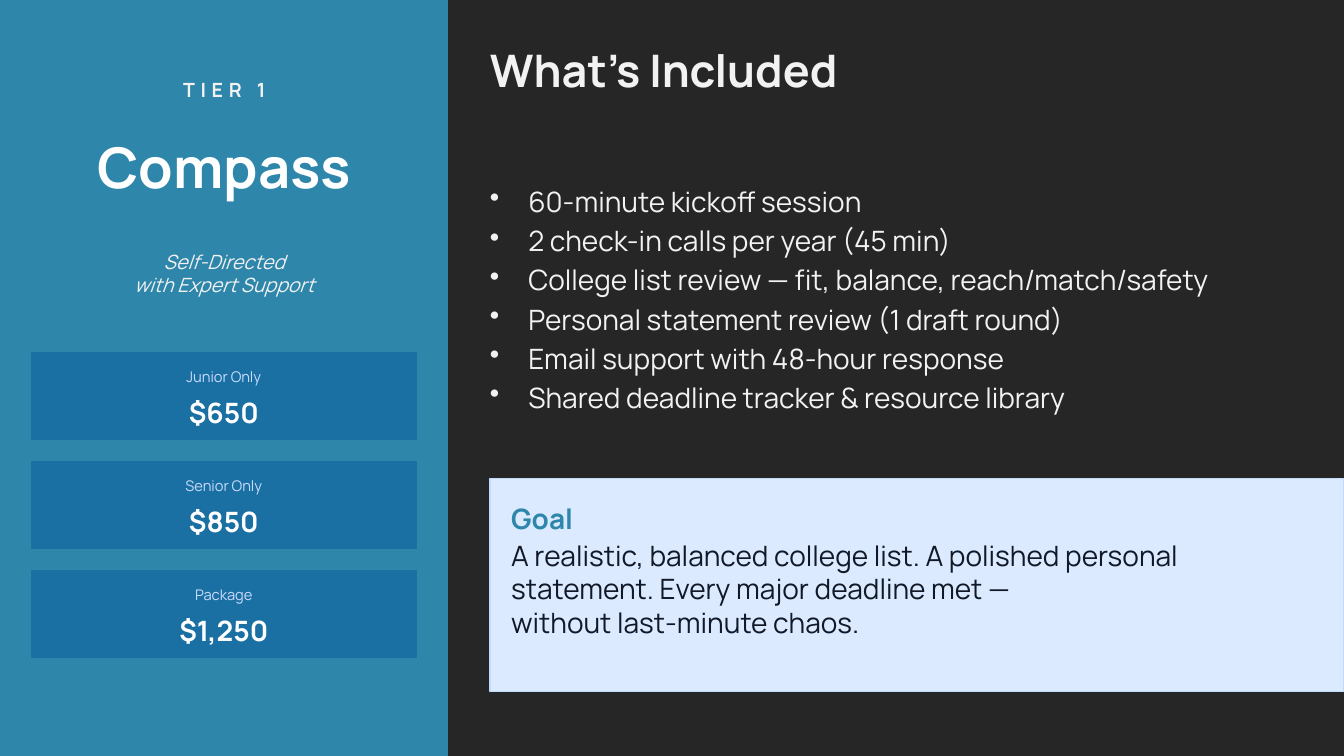
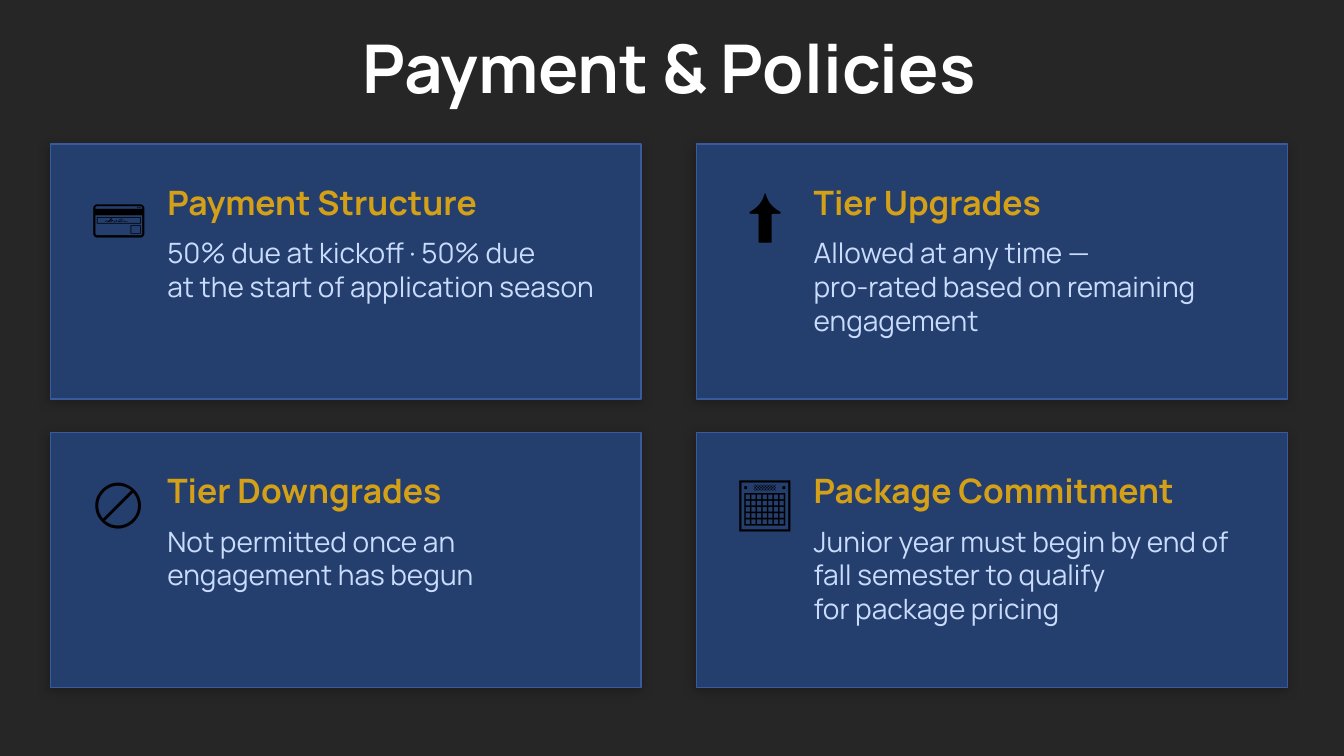
from lxml.etree import SubElement
from pptx import Presentation
from pptx.dml.color import RGBColor
from pptx.enum.shapes import MSO_SHAPE
from pptx.enum.text import MSO_ANCHOR, MSO_AUTO_SIZE, PP_ALIGN
from pptx.oxml import parse_xml
from pptx.oxml.ns import nsdecls, qn
from pptx.util import Inches, Pt

FONT = "Manrope"
DARK = RGBColor(0x26, 0x26, 0x26)
TEAL = RGBColor(0x2E, 0x86, 0xAB)
BLUE = RGBColor(0x1A, 0x6F, 0xA3)
NAVY = RGBColor(0x24, 0x3E, 0x6E)
EDGE = RGBColor(0x3A, 0x5A, 0x9E)
ICE = RGBColor(0xCA, 0xDC, 0xFC)
PALE = RGBColor(0xDB, 0xEA, 0xFE)
RIM = RGBColor(0xBF, 0xDB, 0xFE)
GOLD = RGBColor(0xD4, 0xA0, 0x17)
INK = RGBColor(0x11, 0x18, 0x27)
MIST = RGBColor(0xF2, 0xF2, 0xF2)
WHITE = RGBColor(0xFF, 0xFF, 0xFF)
BLACK = RGBColor(0, 0, 0)

PRICES = [("Junior Only", "$650"), ("Senior Only", "$850"), ("Package", "$1,250")]
PERKS = [
    "60-minute kickoff session",
    "2 check-in calls per year (45 min)",
    "College list review — fit, balance, reach/match/safety",
    "Personal statement review (1 draft round)",
    "Email support with 48-hour response",
    "Shared deadline tracker & resource library",
]
GOAL = ("A realistic, balanced college list. A polished personal statement. "
        "Every major deadline met — \nwithout last-minute chaos.")
RULES = [
    ("💳", "Payment Structure",
     "50% due at kickoff · 50% due \nat the start of application season"),
    ("⬆️", "Tier Upgrades",
     "Allowed at any time — \npro-rated based on remaining engagement"),
    ("🚫", "Tier Downgrades", "Not permitted once an engagement has begun"),
    ("📅", "Package Commitment",
     "Junior year must begin by end of fall semester to qualify \nfor package pricing"),
]


def place(shape, left, top, width, height):
    shape.left, shape.top = Inches(left), Inches(top)
    shape.width, shape.height = Inches(width), Inches(height)


def add_bullet(para, indent=0.38):
    props = para._p.get_or_add_pPr()
    props.set("marL", str(Inches(indent)))
    props.set("indent", str(-Inches(indent)))
    SubElement(props, qn("a:buChar")).set("char", "•")


def write(shape, lines, size=20, color=MIST, bold=False, italic=False,
          align=PP_ALIGN.LEFT, anchor=MSO_ANCHOR.MIDDLE, bullet=False,
          after=0, spacing=0):
    """Fill a shape with one paragraph per line; a newline breaks a line."""
    frame = shape.text_frame
    frame.word_wrap = True
    frame.auto_size = MSO_AUTO_SIZE.NONE
    frame.vertical_anchor = anchor
    frame.margin_left = frame.margin_right = 0
    frame.margin_top = frame.margin_bottom = 0
    for i, line in enumerate([lines] if isinstance(lines, str) else lines):
        para = frame.add_paragraph() if i else frame.paragraphs[0]
        para.text = line
        para.alignment = align
        if bullet:
            add_bullet(para)
        if after:
            para.space_after = Pt(after)
        for run in para.runs:
            font = run.font
            font.name, font.size = FONT, Pt(size)
            font.bold, font.italic = bold, italic
            font.color.rgb = color
            if spacing:
                run._r.get_or_add_rPr().set("spc", str(spacing * 100))


def add_text(slide, box, lines, **style):
    shape = slide.shapes.add_textbox(*map(Inches, box))
    write(shape, lines, **style)


def add_panel(slide, box, fill, line):
    panel = slide.shapes.add_shape(MSO_SHAPE.RECTANGLE, *map(Inches, box))
    panel.shadow.inherit = False
    panel.fill.solid()
    panel.fill.fore_color.rgb = fill
    panel.line.color.rgb = line
    panel.line.width = Pt(1)
    return panel


def add_shadow(shape):
    glow = parse_xml(
        f'<a:outerShdw {nsdecls("a")} blurRad="{Pt(8)}" dist="{Pt(2)}" '
        'dir="8100000" algn="bl" rotWithShape="0"><a:srgbClr val="000000">'
        '<a:alpha val="25000"/></a:srgbClr></a:outerShdw>')
    shape._element.spPr.find(qn("a:effectLst")).append(glow)


def add_slide(deck, title, box, **style):
    slide = deck.slides.add_slide(deck.slide_layouts[5])
    place(slide.shapes.title, *box)
    write(slide.shapes.title, title, bold=True, **style)
    return slide


def add_price(slide, top, label, price):
    left, width = 0.31, 3.82
    add_panel(slide, (left, top, width, 0.86), BLUE, BLUE)
    add_text(slide, (left, top + 0.05, width, 0.37), label,
             size=10.5, color=ICE, align=PP_ALIGN.CENTER)
    add_text(slide, (left, top + 0.39, width, 0.4), price,
             color=WHITE, bold=True, align=PP_ALIGN.CENTER)


def add_card(slide, left, top, icon, head, body):
    add_shadow(add_panel(slide, (left, top, 5.86, 2.53), NAVY, EDGE))
    add_text(slide, (left + 0.27, top + 0.27, 0.82, 0.8), icon,
             size=40, color=BLACK, align=PP_ALIGN.CENTER)
    add_text(slide, (left + 1.16, top + 0.27, 4.43, 0.6), head,
             size=24, color=GOLD, bold=True)
    add_text(slide, (left + 1.16, top + 0.91, 4.43, 1.4), body,
             color=ICE, anchor=MSO_ANCHOR.TOP)


def build_tier(deck):
    slide = add_slide(deck, "What's Included", (4.86, 0.4, 8.33, 0.59), size=32)
    add_panel(slide, (0, 0, 4.44, 7.5), TEAL, TEAL)
    add_text(slide, (0.21, 0.66, 4.03, 0.46), "TIER 1", size=14,
             bold=True, align=PP_ALIGN.CENTER, spacing=4)
    add_text(slide, (0.21, 1.19, 4.03, 0.92), "Compass", size=40,
             color=WHITE, bold=True, align=PP_ALIGN.CENTER)
    add_text(slide, (0.21, 2.18, 4.03, 1.06),
             ["Self-Directed", "with Expert Support"], size=14,
             italic=True, align=PP_ALIGN.CENTER)
    for i, (label, price) in enumerate(PRICES):
        add_price(slide, 3.5 + 1.08 * i, label, price)
    add_text(slide, (4.86, 1.83, 8.47, 2.7), PERKS, bullet=True,
             after=4, anchor=MSO_ANCHOR.TOP)
    add_panel(slide, (4.86, 4.75, 8.47, 2.11), PALE, RIM)
    add_text(slide, (5.07, 4.91, 2.08, 0.46), "Goal", color=TEAL, bold=True)
    add_text(slide, (5.07, 5.34, 8.06, 1.39), GOAL, color=INK,
             anchor=MSO_ANCHOR.TOP)


def build_rules(deck):
    slide = add_slide(deck, "Payment & Policies", (0.5, 0.3, 12.27, 0.73),
                      size=48, color=WHITE, align=PP_ALIGN.CENTER)
    for i, rule in enumerate(RULES):
        row, col = divmod(i, 2)
        add_card(slide, 0.5 + 6.41 * col, 1.43 + 2.86 * row, *rule)


def main():
    deck = Presentation()
    deck.slide_width, deck.slide_height = Inches(13.33), Inches(7.5)
    back = deck.slide_master.background.fill
    back.solid()
    back.fore_color.rgb = DARK
    build_tier(deck)
    build_rules(deck)
    deck.save("out.pptx")


if __name__ == "__main__":
    main()
